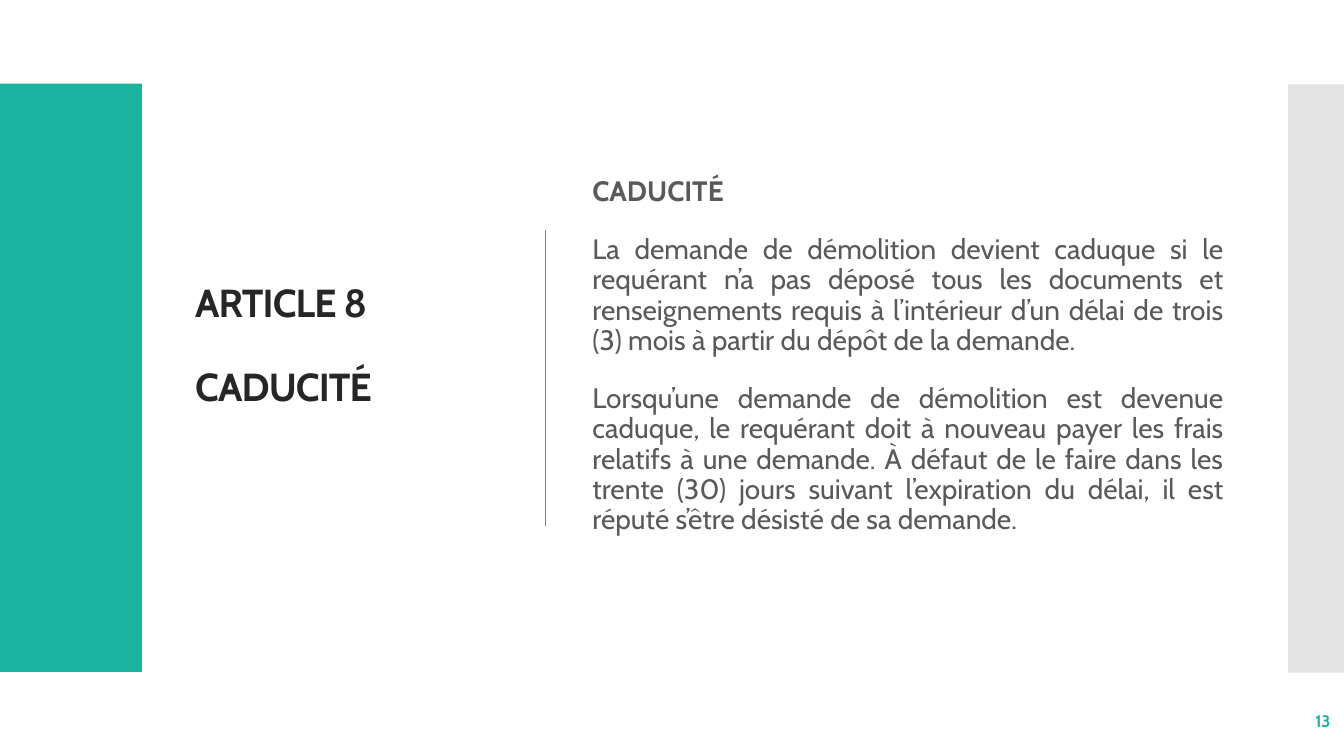
"""Builds the slide on article 8, the lapse of a demolition request."""
from dataclasses import dataclass

import pptx
import pptx.dml.color
import pptx.enum.shapes
import pptx.enum.text
import pptx.oxml
import pptx.oxml.ns
import pptx.slide
import pptx.util
from pptx.util import Cm

ALIGN = pptx.enum.text.PP_ALIGN
ANCHOR = pptx.enum.text.MSO_ANCHOR


@dataclass(frozen=True)
class Theme:
    font: str = "Cabin"
    teal: str = "1AB39F"
    band: str = "C8C8C8"
    rule: str = "808080"
    title: str = "262626"
    body: str = "595959"
    title_size: float = 27.9
    body_size: float = 20
    number_size: float = 12


@dataclass(frozen=True)
class Band:
    left: float
    top: float
    width: float
    height: float
    color: str
    alpha: int = 100


@dataclass(frozen=True)
class Para:
    text: str
    bold: bool = True


@dataclass(frozen=True)
class TextBlock:
    left: float
    top: float
    width: float
    height: float
    paras: tuple[Para, ...]
    size: float
    color: str
    align: ALIGN = ALIGN.LEFT
    anchor: ANCHOR = ANCHOR.TOP
    line_spacing: float = 0.9
    gap: float = 0
    tracking: int = 0


THEME = Theme()

BANDS = (
    Band(0, 2.11, 3.58, 14.82, THEME.teal),
    Band(32.46, 2.13, 1.41, 14.82, THEME.band, 50),
)

TITLE = TextBlock(
    4.67, 7.02, 8.53, 4.2,
    (Para("ARTICLE 8"), Para("CADUCITÉ")),
    THEME.title_size, THEME.title, gap=30.4, tracking=-60,
)
BODY = TextBlock(
    14.68, 4.34, 16.41, 9.6,
    (
        Para("CADUCITÉ"),
        Para(
            "La demande de démolition devient caduque si le requérant n’a pas "
            "déposé tous les documents et renseignements requis à l’intérieur "
            "d’un délai de trois (3) mois à partir du dépôt de la demande.",
            False,
        ),
        Para(
            "Lorsqu’une demande de démolition est devenue caduque, le requérant "
            "doit à nouveau payer les frais relatifs à une demande. À défaut de "
            "le faire dans les trente (30) jours suivant l’expiration du délai, "
            "il est réputé s’être désisté de sa demande.",
            False,
        ),
    ),
    THEME.body_size, THEME.body, ALIGN.JUSTIFY, gap=20,
)
NUMBER = TextBlock(
    29.54, 17.65, 4.24, 1.02, (Para("13"),),
    THEME.number_size, THEME.teal, ALIGN.RIGHT, ANCHOR.MIDDLE, 1,
)


def rgb(color: str) -> pptx.dml.color.RGBColor:
    return pptx.dml.color.RGBColor.from_string(color)


def add_band(s: pptx.slide.Slide, band: Band) -> None:
    sp = s.shapes.add_shape(
        pptx.enum.shapes.MSO_SHAPE.RECTANGLE,
        Cm(band.left), Cm(band.top), Cm(band.width), Cm(band.height),
    )
    sp.shadow.inherit = False
    sp.fill.solid()
    sp.fill.fore_color.rgb = rgb(band.color)
    sp.line.fill.background()
    if band.alpha < 100:
        clr = sp.fill._xPr.find(".//" + pptx.oxml.ns.qn("a:srgbClr"))
        alpha = pptx.oxml.parse_xml(
            f'<a:alpha {pptx.oxml.ns.nsdecls("a")} val="{band.alpha * 1000}"/>'
        )
        clr.append(alpha)


def add_divider(s: pptx.slide.Slide, x: float, top: float, bottom: float) -> None:
    line = s.shapes.add_connector(
        pptx.enum.shapes.MSO_CONNECTOR.STRAIGHT, Cm(x), Cm(top), Cm(x), Cm(bottom)
    )
    line.line.color.rgb = rgb(THEME.rule)
    line.line.width = pptx.util.Pt(1)
    line._element.spPr.append(
        pptx.oxml.parse_xml(f'<a:effectLst {pptx.oxml.ns.nsdecls("a")}/>')
    )


def add_text(s: pptx.slide.Slide, block: TextBlock) -> None:
    sp = s.shapes.add_textbox(
        Cm(block.left), Cm(block.top), Cm(block.width), Cm(block.height)
    )
    tf = sp.text_frame
    tf.word_wrap = True
    tf.vertical_anchor = block.anchor
    for i, para in enumerate(block.paras):
        p = tf.add_paragraph() if i else tf.paragraphs[0]
        p.alignment = block.align
        p.line_spacing = block.line_spacing
        if i:
            p.space_before = pptx.util.Pt(block.gap)
        r = p.add_run()
        r.text = para.text
        r.font.name = THEME.font
        r.font.size = pptx.util.Pt(block.size)
        r.font.bold = para.bold
        r.font.color.rgb = rgb(block.color)
        if block.tracking:
            r._r.get_or_add_rPr().set("spc", str(block.tracking))


def main() -> None:
    prs = pptx.Presentation()
    prs.slide_width, prs.slide_height = Cm(33.87), Cm(19.05)
    s = prs.slides.add_slide(prs.slide_layouts[6])
    for band in BANDS:
        add_band(s, band)
    add_divider(s, 13.74, 5.79, 13.26)
    for block in (TITLE, BODY, NUMBER):
        add_text(s, block)
    prs.save("out.pptx")


if __name__ == "__main__":
    main()
